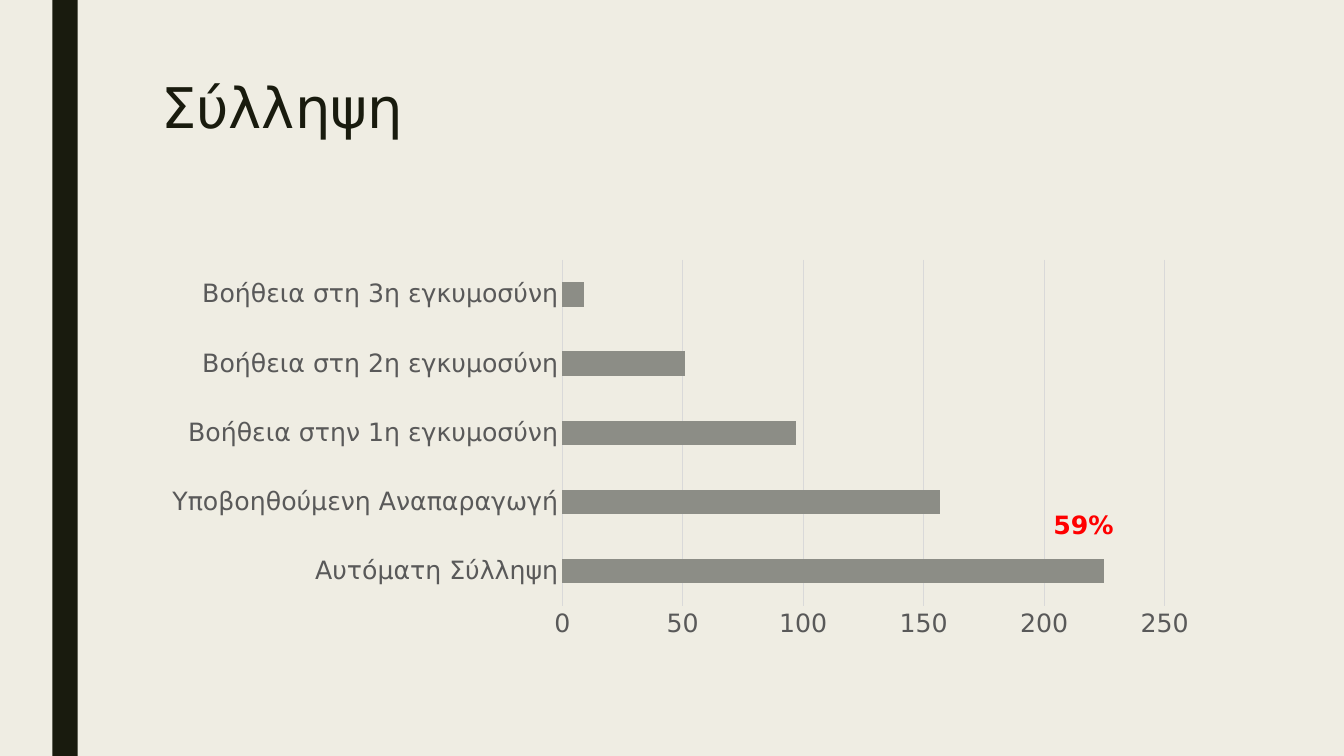
from pptx import Presentation
from pptx.chart.data import CategoryChartData
from pptx.dml.color import RGBColor
from pptx.enum.chart import XL_CHART_TYPE, XL_TICK_MARK
from pptx.enum.shapes import MSO_SHAPE
from pptx.util import Inches, Pt

BAR = XL_CHART_TYPE.BAR_CLUSTERED
NO_TICK = XL_TICK_MARK.NONE
RECT = MSO_SHAPE.RECTANGLE
FONT = "DejaVu Sans"
DARK, CREAM, GREY, GRID, LABEL, RED = (
    "191B0E", "EFEDE3", "8C8D86", "D9D9D9", "595959", "FF0000")
CONCEPTIONS = {
    "Αυτόματη Σύλληψη": 225,
    "Υποβοηθούμενη Αναπαραγωγή": 157,
    "Βοήθεια στην 1η εγκυμοσύνη": 97,
    "Βοήθεια στη 2η εγκυμοσύνη": 51,
    "Βοήθεια στη 3η εγκυμοσύνη": 9,
}


def paint(fmt, color):
    """Give a fill or colour format a solid hex colour."""
    fmt.solid()
    fmt.fore_color.rgb = RGBColor.from_string(color)


def style_font(font, size, color, bold=False):
    """Set the slide's typeface with a size, colour and weight."""
    font.name, font.size, font.bold = FONT, Pt(size), bold
    font.color.rgb = RGBColor.from_string(color)


def add_text(s, box, text, size=18, color=DARK, bold=False, spacing=1.0):
    """Place one line of wrapped text in a box."""
    tf = s.shapes.add_textbox(*map(Inches, box)).text_frame
    tf.word_wrap = True
    p = tf.paragraphs[0]
    p.line_spacing = spacing
    r = p.add_run()
    r.text = text
    style_font(r.font, size, color, bold)


def add_side_band(s, box):
    """Draw the dark vertical band."""
    sp = s.shapes.add_shape(RECT, *map(Inches, box))
    sp.shadow.inherit = False
    paint(sp.fill, DARK)
    sp.line.fill.background()


def style_line(line):
    """Give a chart line the thin grid look."""
    paint(line.fill, GRID)
    line.width = Pt(0.75)


def add_conception_chart(s, box):
    """Draw the bar chart with its percentage note above the lowest bar."""
    data = CategoryChartData()
    data.categories = list(CONCEPTIONS)
    data.add_series("Series 1", list(CONCEPTIONS.values()))
    chart = s.shapes.add_chart(BAR, *map(Inches, box), data).chart
    chart.has_legend = chart.has_title = False
    style_font(chart.font, 18, LABEL)
    plot = chart.plots[0]
    plot.gap_width = 182
    plot.vary_by_categories = False
    paint(plot.series[0].format.fill, GREY)

    cat, val = chart.category_axis, chart.value_axis
    for axis in (cat, val):
        axis.major_tick_mark = axis.minor_tick_mark = NO_TICK
        style_font(axis.tick_labels.font, 18, LABEL)
    cat.has_major_gridlines = False
    style_line(cat.format.line)
    val.minimum_scale, val.maximum_scale, val.major_unit = 0, 250, 50
    val.has_major_gridlines = True
    style_line(val.major_gridlines.format.line)
    val.format.line.fill.background()

    left, top = box[:2]
    add_text(s, (left + 8.85, top + 2.5, 1.3, 0.4), "59%", color=RED, bold=True)


def main():
    """Build and save the slide."""
    prs = Presentation()
    prs.slide_width, prs.slide_height = Inches(13.33), Inches(7.5)
    s = prs.slides.add_slide(prs.slide_layouts[6])
    paint(s.background.fill, CREAM)
    add_side_band(s, (0.52, 0, 0.25, 7.5))
    add_text(s, (1.5, 0.75, 10.5, 1.62), "Σύλληψη", size=40, spacing=0.89)
    add_conception_chart(s, (1.5, 2.5, 10.5, 3.92))
    prs.save("out.pptx")


if __name__ == "__main__":
    main()
